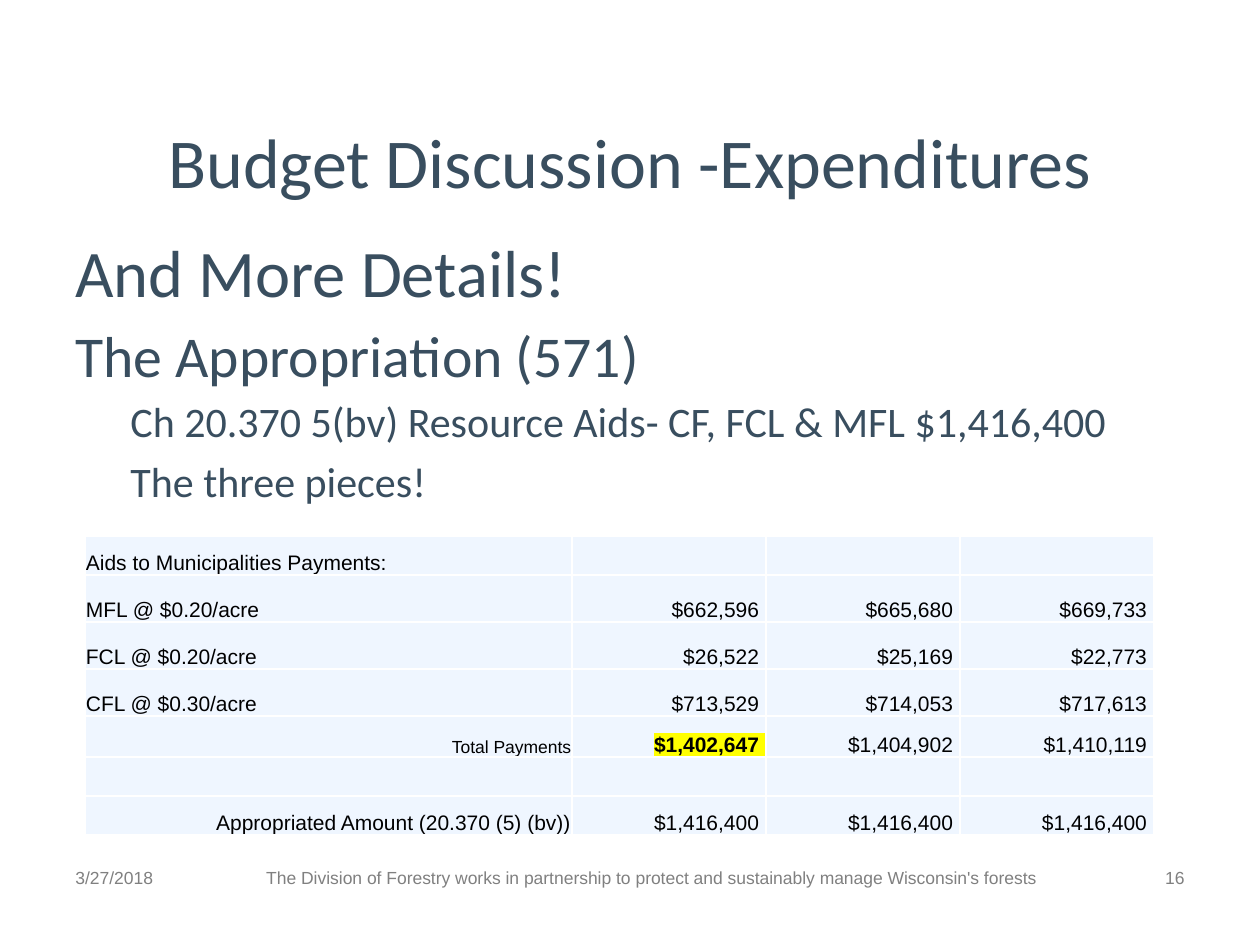
from dataclasses import dataclass

from lxml import etree
from pptx import Presentation
from pptx.dml.color import RGBColor
from pptx.enum.text import MSO_ANCHOR, PP_ALIGN
from pptx.oxml.ns import qn
from pptx.util import Pt

LEFT, CENTER, RIGHT = PP_ALIGN.LEFT, PP_ALIGN.CENTER, PP_ALIGN.RIGHT
TOP, MIDDLE, BOTTOM = MSO_ANCHOR.TOP, MSO_ANCHOR.MIDDLE, MSO_ANCHOR.BOTTOM
EMU_PER_PX = 914400 / 126
TITLE_ONLY = 5


@dataclass(frozen=True)
class Theme:
    heading_font: str = "Calibri"
    plain_font: str = "Arial"
    slate: str = "394E5F"
    gray: str = "808080"
    black: str = "000000"
    cell_fill: str = "EFF6FF"
    border: str = "FFFFFF"
    highlight: str = "FFFF00"
    title_size: int = 40
    cell_size: int = 12
    small_size: int = 10


THEME = Theme()

# Text, size, space before, left indent in px
OUTLINE = [
    ("And More Details!", 38, 0, 0),
    ("The Appropriation (571)", 33, 5, 0),
    ("Ch 20.370 5(bv) Resource Aids- CF, FCL & MFL $1,416,400", 24, 4, 55),
    ("The three pieces!", 24, 5, 55),
]

# Row height in px, label alignment, label, amounts
PAYMENTS = [
    (39, LEFT, "Aids to Municipalities Payments:", ["", "", ""]),
    (47, LEFT, "MFL @ $0.20/acre", ["$662,596 ", "$665,680 ", "$669,733 "]),
    (47, LEFT, "FCL @ $0.20/acre", ["$26,522 ", "$25,169 ", "$22,773 "]),
    (47, LEFT, "CFL @ $0.30/acre", ["$713,529 ", "$714,053 ", "$717,613 "]),
    (41, RIGHT, "Total Payments", ["$1,402,647 ", "$1,404,902 ", "$1,410,119 "]),
    (39, RIGHT, "", ["", "", ""]),
    (39, RIGHT, "Appropriated Amount (20.370 (5) (bv))", ["$1,416,400 "] * 3),
]
COLUMN_WIDTHS = [487, 194, 194, 194]
TOTAL_LABEL, KEY_TOTAL = "Total Payments", "$1,402,647 "


def px(length):
    return round(length * EMU_PER_PX)


def style(para, font, size, color, align=LEFT, bold=False):
    para.alignment = align
    para.font.name = font
    para.font.size = Pt(size)
    para.font.bold = bold
    para.font.color.rgb = RGBColor.from_string(color)


def add_color(parent, tag, color):
    holder = etree.SubElement(parent, qn(tag))
    etree.SubElement(holder, qn("a:srgbClr"), val=color)


def add_title(page, left, top, width, height):
    title = page.shapes.title
    title.left, title.top = px(left), px(top)
    title.width, title.height = px(width), px(height)
    title.text_frame.text = "Budget Discussion -Expenditures"
    title.text_frame.vertical_anchor = MIDDLE
    style(title.text_frame.paragraphs[0], THEME.heading_font,
          THEME.title_size, THEME.slate, CENTER)


def add_text_box(page, left, top, width, height):
    box = page.shapes.add_textbox(px(left), px(top), px(width), px(height))
    box.text_frame.word_wrap = True
    box.text_frame.vertical_anchor = TOP
    return box.text_frame


def add_outline(page, left, top, width, height):
    frame = add_text_box(page, left, top, width, height)
    frame.margin_top = px(11)
    for index, (text, size, space, indent) in enumerate(OUTLINE):
        para = frame.add_paragraph() if index else frame.paragraphs[0]
        para.text = text
        if space:
            para.space_before = Pt(space)
        if indent:
            para.level = 1
            properties = para._p.get_or_add_pPr()
            properties.set("marL", str(px(indent)))
            properties.set("indent", "0")
        style(para, THEME.heading_font, size, THEME.slate)


def fill_cell(cell, text, align):
    cell.margin_left = cell.margin_right = cell.margin_top = px(1)
    cell.margin_bottom = 0
    cell.vertical_anchor = BOTTOM

    # White rules on all four sides
    properties = cell._tc.get_or_add_tcPr()
    for side in ("a:lnL", "a:lnR", "a:lnT", "a:lnB"):
        line = etree.SubElement(properties, qn(side), w=str(Pt(1)))
        add_color(line, "a:solidFill", THEME.border)
    cell.fill.solid()
    cell.fill.fore_color.rgb = RGBColor.from_string(THEME.cell_fill)

    para = cell.text_frame.paragraphs[0]
    size = THEME.small_size if text == TOTAL_LABEL else THEME.cell_size
    style(para, THEME.plain_font, size, THEME.black, align, text == KEY_TOTAL)
    if text:
        span = para.add_run()
        span.text = text
        if text == KEY_TOTAL:
            add_color(span._r.get_or_add_rPr(), "a:highlight", THEME.highlight)


def add_payments(page, left, top):
    heights = [row[0] for row in PAYMENTS]
    table = page.shapes.add_table(
        len(PAYMENTS), len(COLUMN_WIDTHS), px(left), px(top),
        px(sum(COLUMN_WIDTHS)), px(sum(heights))).table
    table.first_row = table.horz_banding = False
    for column, width in zip(table.columns, COLUMN_WIDTHS):
        column.width = px(width)
    for row, (height, align, label, amounts) in zip(table.rows, PAYMENTS):
        row.height = px(height)
        for index, text in enumerate([label, *amounts]):
            fill_cell(row.cells[index], text, RIGHT if index else align)


def add_footer(page, left, top, width, height):
    # Offset and width of each part
    parts = [
        (0, 168, LEFT, "3/27/2018"),
        (189, 798, CENTER, "The Division of Forestry works in partnership to "
                           "protect and sustainably manage Wisconsin's forests"),
        (width - 136, 136, RIGHT, "16"),
    ]
    for offset, part_width, align, text in parts:
        frame = add_text_box(page, left + offset, top, part_width, height)
        frame.text = text
        style(frame.paragraphs[0], THEME.plain_font, THEME.small_size,
              THEME.gray, align)


def main():
    deck = Presentation()
    deck.slide_width, deck.slide_height = px(1260), px(945)
    page = deck.slides.add_slide(deck.slide_layouts[TITLE_ONLY])
    add_title(page, 63, 105, 1134, 111)
    add_outline(page, 63, 220, 1134, 609)
    add_footer(page, 63, 861, 1134, 66)
    add_payments(page, 85, 536)
    deck.save("out.pptx")


if __name__ == "__main__":
    main()
